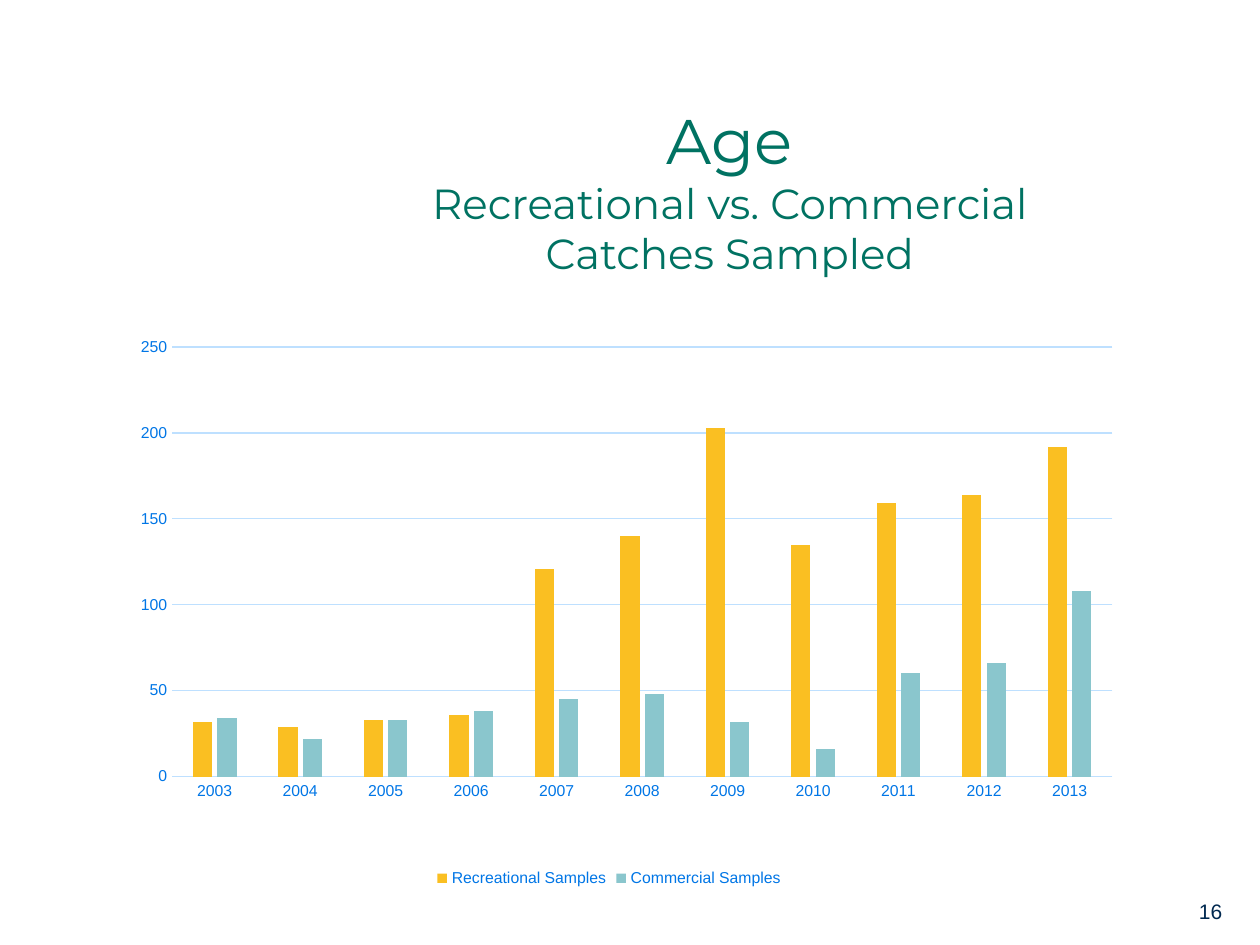
from dataclasses import dataclass

from pptx import Presentation
from pptx.chart.data import CategoryChartData
from pptx.dml.color import RGBColor
from pptx.enum.chart import XL_CHART_TYPE as ChartType
from pptx.enum.chart import XL_LEGEND_POSITION as LegendPosition
from pptx.enum.chart import XL_TICK_MARK as TickMark
from pptx.enum.text import MSO_ANCHOR as Anchor
from pptx.enum.text import PP_ALIGN as Align
from pptx.oxml import parse_xml
from pptx.oxml.ns import nsdecls, qn
from pptx.util import Inches, Pt

COLORS = {
    "title": "007262",
    "number": "002950",
    "label": "0076E6",
    "grid": "BEE0FF",
    "recreational": "FABF22",
    "commercial": "8AC6CD",
}
UNIT = Inches(1) / 12
YEARS = [str(year) for year in range(2003, 2014)]
PLOT_SHARES = {"x": 0.092, "y": 0.038, "w": 0.878, "h": 0.758}


@dataclass(frozen=True)
class Area:
    column: float
    row: float
    columns: float
    rows: float

    def lengths(self) -> list[int]:
        return [round(n * UNIT) for n in (self.column, self.row, self.columns, self.rows)]


@dataclass(frozen=True)
class Line:
    text: str
    size: float
    font: str
    color: str


@dataclass(frozen=True)
class Series:
    name: str
    color: str
    values: tuple[int, ...]


TITLE = [
    Line("Age", 36, "Montserrat", "title"),
    Line("Recreational vs. Commercial", 24, "Montserrat", "title"),
    Line("Catches Sampled", 24, "Montserrat", "title"),
]
PAGE_NUMBER = [Line("16", 12, "Arial", "number")]
SAMPLES = [
    Series("Recreational Samples", "recreational",
           (32, 29, 33, 36, 121, 140, 203, 135, 159, 164, 192)),
    Series("Commercial Samples", "commercial",
           (34, 22, 33, 38, 45, 48, 32, 16, 60, 66, 108)),
]


def rgb(name: str) -> RGBColor:
    return RGBColor.from_string(COLORS[name])


def style_font(font, size: float, name: str, color: str) -> None:
    font.size = Pt(size)
    font.name = name
    font.color.rgb = rgb(color)


def style_line(line_format) -> None:
    line_format.color.rgb = rgb("grid")
    line_format.width = Pt(0.75)


def add_text(slide, area: Area, lines: list[Line], align: Align, anchor: Anchor,
             bottom_inset: float = 0.05) -> None:
    frame = slide.shapes.add_textbox(*area.lengths()).text_frame
    frame.word_wrap = True
    frame.vertical_anchor = anchor
    frame.margin_bottom = Inches(bottom_inset)
    paragraph = frame.paragraphs[0]
    paragraph.alignment = align
    for index, line in enumerate(lines):
        if index:
            paragraph.add_line_break()
        run = paragraph.add_run()
        run.text = line.text
        style_font(run.font, line.size, line.font, line.color)


def place_plot(chart) -> None:
    plot_area = chart.element.find(f".//{qn('c:plotArea')}")
    for layout in plot_area.findall(qn("c:layout")):
        plot_area.remove(layout)
    modes = '<c:xMode val="edge"/><c:yMode val="edge"/>'
    shares = "".join(f'<c:{key} val="{share}"/>' for key, share in PLOT_SHARES.items())
    plot_area.insert(0, parse_xml(
        f'<c:layout {nsdecls("c")}><c:manualLayout><c:layoutTarget val="inner"/>'
        f"{modes}{shares}</c:manualLayout></c:layout>"
    ))


def add_sample_chart(slide, area: Area, samples: list[Series]) -> None:
    data = CategoryChartData()
    data.categories = YEARS
    for series in samples:
        data.add_series(series.name, series.values)
    chart = slide.shapes.add_chart(ChartType.COLUMN_CLUSTERED, *area.lengths(), data).chart
    chart.has_title = False
    style_font(chart.font, 10, "Arial", "number")
    place_plot(chart)

    plot = chart.plots[0]
    plot.gap_width = 219
    plot.overlap = -27
    plot.vary_by_categories = False
    for bars, series in zip(plot.series, samples):
        bars.format.fill.solid()
        bars.format.fill.fore_color.rgb = rgb(series.color)
        bars.invert_if_negative = False

    for axis in (chart.category_axis, chart.value_axis):
        axis.major_tick_mark = axis.minor_tick_mark = TickMark.NONE
        style_font(axis.tick_labels.font, 9, "Arial", "label")
    style_line(chart.category_axis.format.line)
    value_axis = chart.value_axis
    value_axis.minimum_scale = 0
    value_axis.maximum_scale = 250
    value_axis.major_unit = 50
    value_axis.format.line.fill.background()
    style_line(value_axis.major_gridlines.format.line)

    chart.has_legend = True
    chart.legend.position = LegendPosition.BOTTOM
    chart.legend.include_in_layout = False
    style_font(chart.legend.font, 9, "Arial", "label")


def main() -> None:
    presentation = Presentation()
    presentation.slide_width = round(120 * UNIT)
    presentation.slide_height = round(90 * UNIT)
    slide = presentation.slides.add_slide(presentation.slide_layouts[6])
    add_text(slide, Area(113, 85, 10, 3.6), PAGE_NUMBER, Align.LEFT, Anchor.TOP)
    add_text(slide, Area(30, 15, 79, 11), TITLE, Align.CENTER, Anchor.MIDDLE, 0.45)
    add_sample_chart(slide, Area(7, 31, 102, 54), SAMPLES)
    presentation.save("out.pptx")


if __name__ == "__main__":
    main()
